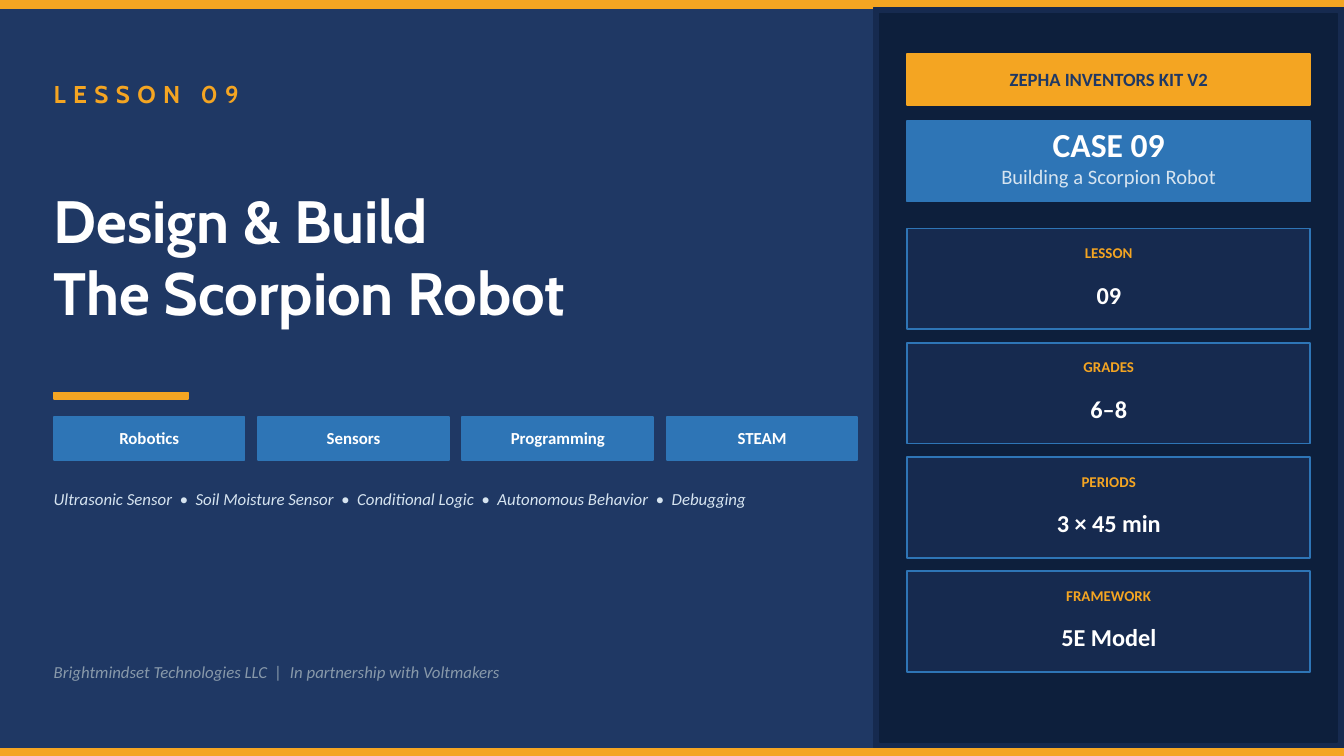
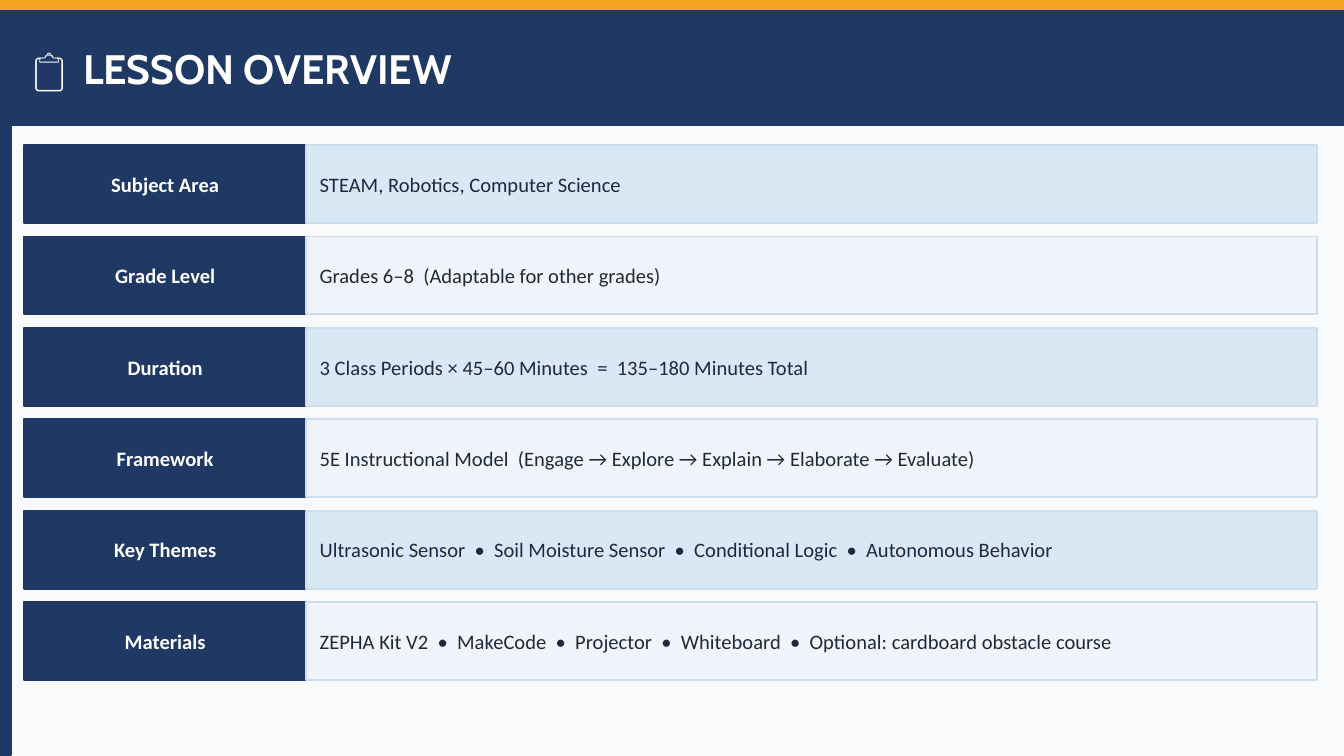
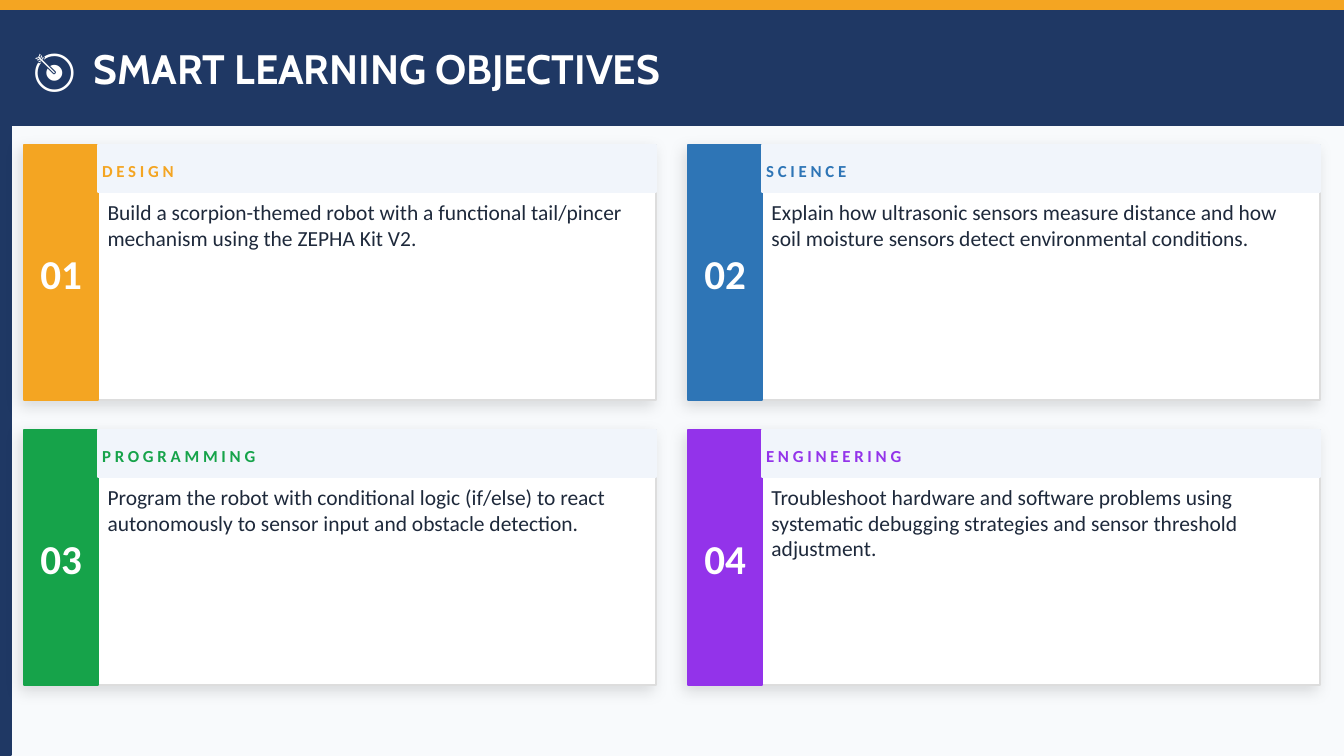
from lxml import etree
from pptx import Presentation
from pptx.dml.color import RGBColor
from pptx.enum.shapes import MSO_SHAPE
from pptx.enum.text import MSO_ANCHOR, MSO_AUTO_SIZE, PP_ALIGN
from pptx.oxml.ns import qn
from pptx.util import Inches, Pt

NAVY = RGBColor(0x1F, 0x38, 0x64)
PANEL = RGBColor(0x16, 0x2A, 0x4F)
DEEP = RGBColor(0x0D, 0x1F, 0x3C)
AMBER = RGBColor(0xF4, 0xA5, 0x22)
BLUE = RGBColor(0x2E, 0x75, 0xB6)
GREEN = RGBColor(0x16, 0xA3, 0x4A)
PURPLE = RGBColor(0x93, 0x33, 0xEA)
WHITE = RGBColor(0xFF, 0xFF, 0xFF)
PAPER = RGBColor(0xF8, 0xFA, 0xFC)
MIST = RGBColor(0xF1, 0xF5, 0xFB)
SKY = RGBColor(0xD9, 0xE8, 0xF5)
ICE = RGBColor(0xD6, 0xE4, 0xF0)
ROW_EDGE = RGBColor(0xCC, 0xDD, 0xEE)
CARD_EDGE = RGBColor(0xDD, 0xDD, 0xDD)
SLATE = RGBColor(0x88, 0x99, 0xAA)
INK = RGBColor(0x1E, 0x29, 0x3B)

HEAD_FONT = "Cabin"
BODY_FONT = "Calibri"
DOT = "  •  "
LEFT, CENTER = PP_ALIGN.LEFT, PP_ALIGN.CENTER
TOP, MIDDLE, BOTTOM = MSO_ANCHOR.TOP, MSO_ANCHOR.MIDDLE, MSO_ANCHOR.BOTTOM


def style(size, color, name=BODY_FONT, spacing=0, **flags):
    font = {"size": Pt(size), "name": name, "bold": False, "italic": False}
    return {"font": font | flags, "color": color, "spacing": spacing}


class DeckBuilder:
    def __init__(self):
        self.deck = Presentation()
        self.deck.slide_width = Inches(10)
        self.deck.slide_height = Inches(5.625)
        self.page = None

    def add_page(self, background):
        self.page = self.deck.slides.add_slide(self.deck.slide_layouts[5])
        self.page.background.fill.solid()
        self.page.background.fill.fore_color.rgb = background

    def set_words(self, box, lines, look, align=LEFT, anchor=MIDDLE, inset=0):
        frame = box.text_frame
        settings = {
            "word_wrap": True, "auto_size": MSO_AUTO_SIZE.NONE,
            "vertical_anchor": anchor, "margin_left": Inches(inset),
            "margin_right": 0, "margin_top": 0, "margin_bottom": 0,
        }
        for key, value in settings.items():
            setattr(frame, key, value)
        for index, line in enumerate(lines.split("\n")):
            para = frame.add_paragraph() if index else frame.paragraphs[0]
            para.alignment = align
            span = para.add_run()
            span.text = line
            for key, value in look["font"].items():
                setattr(span.font, key, value)
            span.font.color.rgb = look["color"]
            if look["spacing"]:
                span._r.get_or_add_rPr().set("spc", str(look["spacing"] * 100))

    def text(self, place, words, look, **layout):
        box = self.page.shapes.add_textbox(*map(Inches, place))
        self.set_words(box, words, look, **layout)

    def block(self, place, fill, edge=None, words=None, look=None,
              align=CENTER, inset=0):
        box = self.page.shapes.add_shape(MSO_SHAPE.RECTANGLE, *map(Inches, place))
        box.shadow.inherit = False
        box.fill.solid()
        box.fill.fore_color.rgb = fill
        box.line.color.rgb = edge or fill
        box.line.width = Pt(1)
        if words:
            self.set_words(box, words, look, align=align, inset=inset)
        return box

    def raised_block(self, place, fill, edge):
        box = self.block(place, fill, edge)
        effects = box.element.spPr.find(qn("a:effectLst"))
        shadow = etree.SubElement(
            effects, qn("a:outerShdw"), blurRad=str(Pt(8)), dist=str(Pt(3)),
            dir=str(135 * 60000), algn="bl", rotWithShape="0")
        tint = etree.SubElement(shadow, qn("a:srgbClr"), val="000000")
        etree.SubElement(tint, qn("a:alpha"), val="12000")

    def title(self, place, words, size):
        box = self.page.shapes.title
        box.left, box.top, box.width, box.height = map(Inches, place)
        self.set_words(box, words, style(size, WHITE, HEAD_FONT, bold=True))
        box.element.getparent().append(box.element)

    def content_page(self, heading):
        self.add_page(PAPER)
        self.block((0, 0, 10, 0.08), AMBER)
        self.block((0, 0.08, 0.08, 5.54), NAVY)
        self.block((0.08, 0.08, 9.92, 0.85), NAVY)
        self.title((0.25, 0.08, 9.5, 0.85), heading, 22)


def cover(builder):
    builder.add_page(NAVY)
    for top in (0, 5.57):
        builder.block((0, top, 10, 0.06), AMBER)

    builder.block((6.5, 0.06, 3.5, 5.5), PANEL)
    builder.block((6.55, 0.1, 3.4, 5.42), DEEP)
    left, width = 6.75, 3
    builder.block((left, 0.4, width, 0.38), AMBER, words="ZEPHA INVENTORS KIT V2",
                  look=style(10, NAVY, bold=True))
    builder.block((left, 0.9, width, 0.6), BLUE)
    builder.text((left, 0.9, width, 0.32), "CASE 09", style(18, WHITE, bold=True),
                 align=CENTER, anchor=BOTTOM)
    builder.text((left, 1.22, width, 0.28), "Building a Scorpion Robot",
                 style(11, ICE), align=CENTER, anchor=TOP)
    facts = [("LESSON", "09"), ("GRADES", "6–8"), ("PERIODS", "3 × 45 min"),
             ("FRAMEWORK", "5E Model")]
    for index, (label, value) in enumerate(facts):
        top = 1.7 + 0.85 * index
        builder.block((left, top, width, 0.75), PANEL, BLUE)
        builder.text((left, top + 0.04, width, 0.28), label,
                     style(8, AMBER, bold=True), align=CENTER)
        builder.text((left, top + 0.3, width, 0.38), value,
                     style(13, WHITE, bold=True), align=CENTER)

    builder.text((0.4, 0.5, 5.9, 0.4), "LESSON 09",
                 style(13, AMBER, HEAD_FONT, spacing=4, bold=True))
    builder.title((0.4, 0.95, 5.9, 1.9), "Design & Build\nThe Scorpion Robot", 32)
    builder.block((0.4, 2.92, 1, 0.05), AMBER)
    for index, topic in enumerate(("Robotics", "Sensors", "Programming", "STEAM")):
        builder.block((0.4 + 1.52 * index, 3.1, 1.42, 0.32), BLUE, words=topic,
                      look=style(9, WHITE, bold=True))
    themes = ("Ultrasonic Sensor", "Soil Moisture Sensor", "Conditional Logic",
              "Autonomous Behavior", "Debugging")
    builder.text((0.4, 3.55, 5.9, 0.32), DOT.join(themes), style(9, ICE, italic=True))
    builder.text((0.4, 4.85, 5.9, 0.3),
                 "Brightmindset Technologies LLC  |  In partnership with Voltmakers",
                 style(9, SLATE, italic=True))


def overview(builder):
    builder.content_page("📋  LESSON OVERVIEW")
    rows = [
        ("Subject Area", "STEAM, Robotics, Computer Science"),
        ("Grade Level", "Grades 6–8  (Adaptable for other grades)"),
        ("Duration", "3 Class Periods × 45–60 Minutes  =  135–180 Minutes Total"),
        ("Framework", "5E Instructional Model  "
                      "(Engage → Explore → Explain → Elaborate → Evaluate)"),
        ("Key Themes", DOT.join(("Ultrasonic Sensor", "Soil Moisture Sensor",
                                 "Conditional Logic", "Autonomous Behavior"))),
        ("Materials", DOT.join(("ZEPHA Kit V2", "MakeCode", "Projector", "Whiteboard",
                                "Optional: cardboard obstacle course"))),
    ]
    for index, (label, value) in enumerate(rows):
        top = 1.08 + 0.68 * index
        builder.block((0.18, top, 2.1, 0.58), NAVY, words=label,
                      look=style(11, WHITE, bold=True))
        builder.block((2.28, top, 7.52, 0.58), MIST if index % 2 else SKY, ROW_EDGE,
                      value, style(11, INK), align=LEFT, inset=0.1)


def objectives(builder):
    builder.content_page("🎯  SMART LEARNING OBJECTIVES")
    goals = [
        ("DESIGN", AMBER, "Build a scorpion-themed robot with a functional "
         "tail/pincer mechanism using the ZEPHA Kit V2."),
        ("SCIENCE", BLUE, "Explain how ultrasonic sensors measure distance and how "
         "soil moisture sensors detect environmental conditions."),
        ("PROGRAMMING", GREEN, "Program the robot with conditional logic (if/else) to "
         "react autonomously to sensor input and obstacle detection."),
        ("ENGINEERING", PURPLE, "Troubleshoot hardware and software problems using "
         "systematic debugging strategies and sensor threshold adjustment."),
    ]
    for index, (area, color, goal) in enumerate(goals):
        row, column = divmod(index, 2)
        left, top = 0.18 + 4.94 * column, 1.08 + 2.12 * row
        builder.raised_block((left, top, 4.7, 1.9), WHITE, CARD_EDGE)
        builder.block((left, top, 0.55, 1.9), color, words=f"{index + 1:02}",
                      look=style(22, WHITE, bold=True))
        builder.block((left + 0.55, top, 4.15, 0.35), MIST)
        builder.text((left + 0.58, top + 0.04, 4.05, 0.3), area,
                     style(9, color, spacing=2, bold=True))
        builder.text((left + 0.62, top + 0.4, 3.98, 1.42), goal, style(11.5, INK),
                     anchor=TOP)


def main():
    builder = DeckBuilder()
    cover(builder)
    overview(builder)
    objectives(builder)
    builder.deck.save("out.pptx")


if __name__ == "__main__":
    main()
